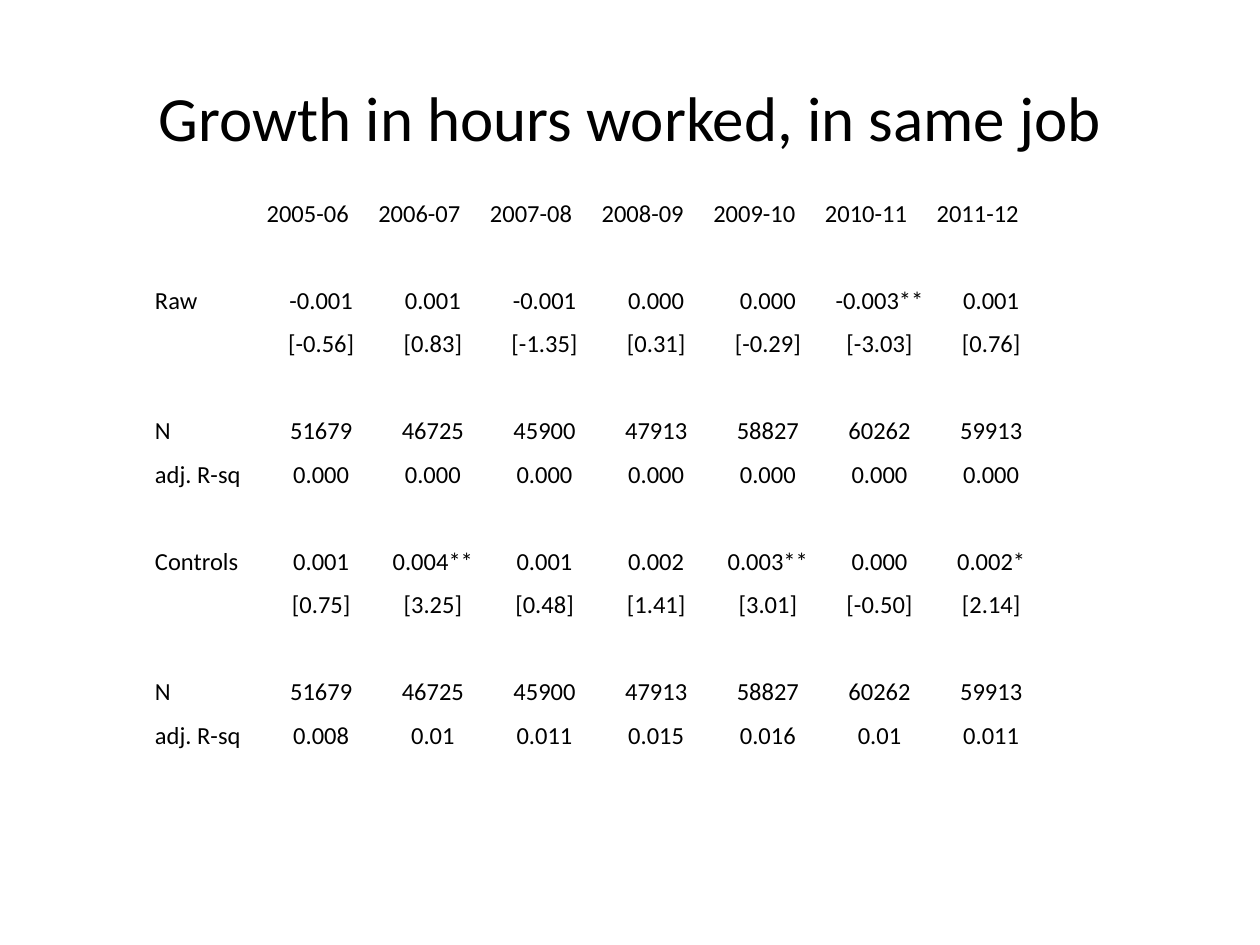
import dataclasses

import pptx
import pptx.dml.color
import pptx.enum.text
import pptx.util

Inches = pptx.util.Inches
Pt = pptx.util.Pt
ALIGN = pptx.enum.text.PP_ALIGN
ANCHOR = pptx.enum.text.MSO_ANCHOR


@dataclasses.dataclass(frozen=True)
class Theme:
    font: str = "Calibri"
    ink: pptx.dml.color.RGBColor = pptx.dml.color.RGBColor(0, 0, 0)
    title_size: int = 36
    table_size: int = 14


THEME = Theme()

SAMPLE_SIZES = ["N", "51679", "46725", "45900", "47913", "58827", "60262", "59913"]
BLANK = [""] * 8
RESULTS = [
    ["", "2005-06", "2006-07", "2007-08", "2008-09", "2009-10", "2010-11", "2011-12"],
    BLANK,
    ["Raw", "-0.001", "0.001", "-0.001", "0.000", "0.000", "-0.003**", "0.001"],
    ["", "[-0.56]", "[0.83]", "[-1.35]", "[0.31]", "[-0.29]", "[-3.03]", "[0.76]"],
    BLANK,
    SAMPLE_SIZES,
    ["adj. R-sq"] + ["0.000"] * 7,
    BLANK,
    ["Controls", "0.001", "0.004**", "0.001", "0.002", "0.003**", "0.000", "0.002*"],
    ["", "[0.75]", "[3.25]", "[0.48]", "[1.41]", "[3.01]", "[-0.50]", "[2.14]"],
    BLANK,
    SAMPLE_SIZES,
    ["adj. R-sq", "0.008", "0.01", "0.011", "0.015", "0.016", "0.01", "0.011"],
]


def style_paragraph(p, size, align):
    p.alignment = align
    p.font.name = THEME.font
    p.font.size = Pt(size)
    p.font.bold = False
    p.font.color.rgb = THEME.ink


def add_title(s, text, left, top, width, height):
    sp = s.shapes.title
    sp.left, sp.top, sp.width, sp.height = left, top, width, height
    tf = sp.text_frame
    tf.text = text
    tf.vertical_anchor = ANCHOR.MIDDLE
    style_paragraph(tf.paragraphs[0], THEME.title_size, ALIGN.CENTER)


def add_results_table(s, rows, left, top, width, height):
    table = s.shapes.add_table(len(rows), len(rows[0]), left, top, width, height).table
    table.first_row = False
    table.horz_banding = False
    for i, row in enumerate(rows):
        for j, text in enumerate(row):
            cell = table.cell(i, j)
            cell.fill.background()
            cell.margin_left = cell.margin_right = cell.margin_top = Inches(0.01)
            cell.margin_bottom = 0
            cell.vertical_anchor = ANCHOR.BOTTOM
            cell.text = text
            align = ALIGN.CENTER if i and j else ALIGN.LEFT
            style_paragraph(cell.text_frame.paragraphs[0], THEME.table_size, align)


def main():
    prs = pptx.Presentation()
    prs.slide_width, prs.slide_height = Inches(10), Inches(7.5)
    s = prs.slides.add_slide(prs.slide_layouts[5])
    add_title(s, "Growth in hours worked, in same job",
              Inches(0.5), Inches(0.3), Inches(9), Inches(1.25))
    add_results_table(s, RESULTS, Inches(1.22), Inches(1.47), Inches(7.09), Inches(4.49))
    prs.save("out.pptx")


if __name__ == "__main__":
    main()
